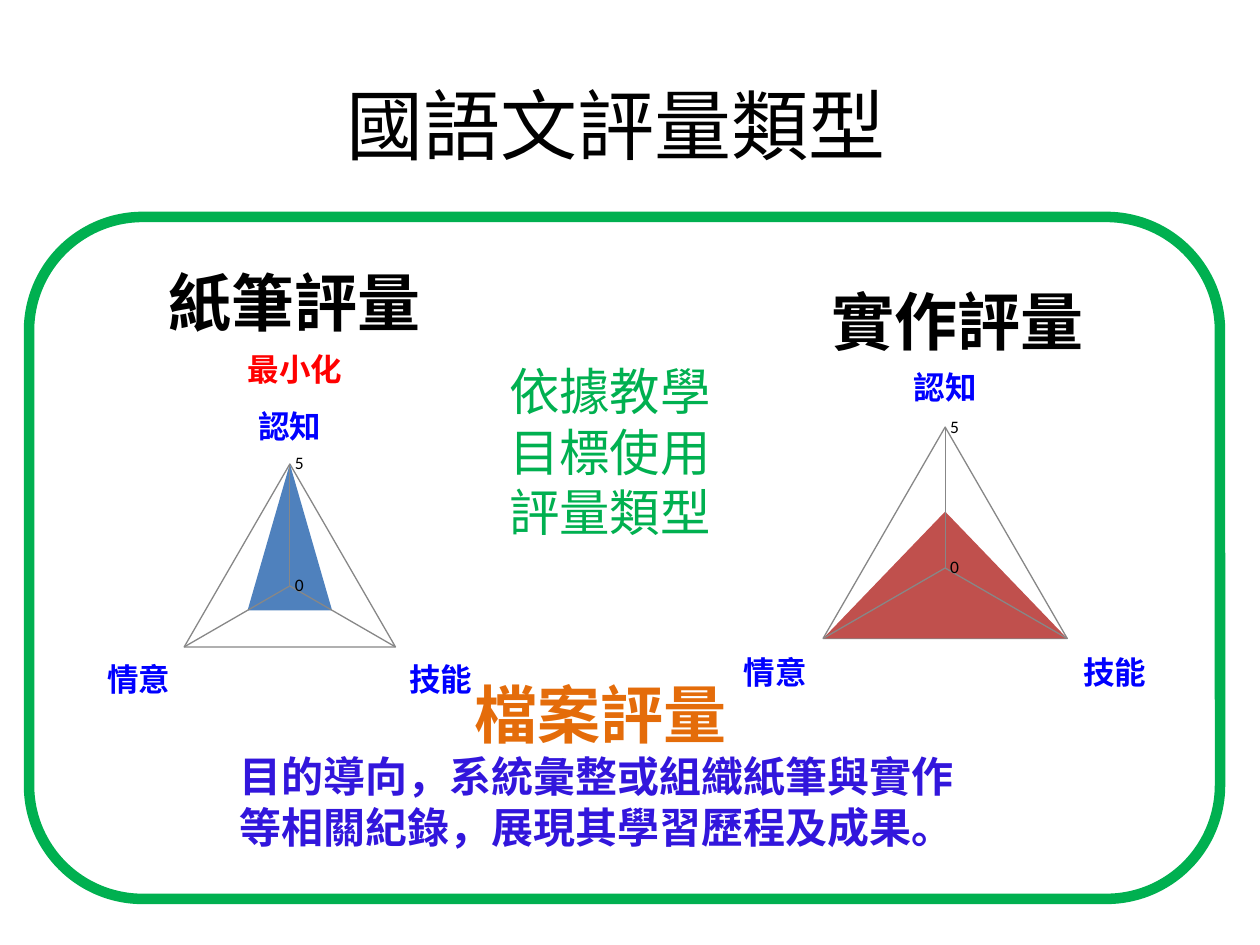
from dataclasses import dataclass

from lxml.etree import SubElement
from pptx import Presentation
from pptx.chart.data import CategoryChartData
from pptx.dml.color import RGBColor
from pptx.enum.chart import XL_CHART_TYPE as CT, XL_TICK_MARK as TM
from pptx.enum.shapes import MSO_SHAPE as MS
from pptx.enum.text import MSO_ANCHOR as MA, PP_ALIGN as PA
from pptx.oxml import parse_xml
from pptx.oxml.ns import nsdecls, qn
from pptx.util import Pt

PX = 914400 // 126
COLORS = {
    "black": "000000", "green": "00B050", "orange": "E46C0A", "violet": "3216DC",
    "blue": "0000FF", "red": "FF0000", "gray": "878787",
    "paper": "4F81BD", "practice": "C0504D",
}
ABILITIES = ("認知", "技能", "情意")


@dataclass(frozen=True)
class Box:
    x: int
    y: int
    w: int
    h: int

    def emu(self) -> tuple[int, ...]:
        return tuple(v * PX for v in (self.x, self.y, self.w, self.h))


@dataclass(frozen=True)
class Radar:
    box: Box
    title: str
    title_at: tuple[int, int]
    center: tuple[int, int]
    radius: int
    scores: tuple[int, ...]
    color: str
    note: str = ""


RADARS = (
    Radar(Box(0, 220, 581, 498), "紙筆評量", (165, 247), (290, 586), 122,
          (5, 2, 2), "paper", "最小化"),
    Radar(Box(669, 227, 552, 493), "實作評量", (820, 253), (945, 568), 141,
          (2, 5, 5), "practice"),
)


def rgb(name: str) -> RGBColor:
    return RGBColor.from_string(COLORS[name])


def set_font(font, size: float, color: str, bold: bool = False, name: str = "Calibri") -> None:
    font.size, font.bold, font.name = Pt(size), bold, name
    font.color.rgb = rgb(color)


def add_text(tf, text: str, *, first: bool = True, align=PA.CENTER, ea: str = "", **font) -> None:
    p = tf.paragraphs[0] if first else tf.add_paragraph()
    p.alignment = align
    r = p.add_run()
    r.text = text
    set_font(r.font, **font)
    if ea:
        latin = r._r.find(qn("a:rPr")).find(qn("a:latin"))
        latin.addnext(parse_xml(f'<a:ea {nsdecls("a")} typeface="{ea}"/>'))


def add_box(s, box: Box, anchor=MA.TOP):
    tf = s.shapes.add_textbox(*box.emu()).text_frame
    tf.word_wrap = True
    tf.vertical_anchor = anchor
    return tf


def place(parent, box: Box, x: int, y: int, size: int = 0) -> None:
    for old in parent.findall(qn("c:layout")):
        parent.remove(old)
    layout = parse_xml(f'<c:layout {nsdecls("c")}><c:manualLayout/></c:layout>')
    values = {"xMode": "edge", "yMode": "edge",
              "x": round((x - box.x) / box.w, 3), "y": round((y - box.y) / box.h, 3)}
    if size:
        values = {"layoutTarget": "inner", **values,
                  "w": round(size / box.w, 3), "h": round(size / box.h, 3)}
    for tag, value in values.items():
        SubElement(layout[0], qn(f"c:{tag}")).set("val", str(value))
    tx = parent.find(qn("c:tx"))
    if tx is None:
        parent.insert(0, layout)
    else:
        tx.addnext(layout)


def add_radar(s, radar: Radar) -> None:
    data = CategoryChartData()
    data.categories = ABILITIES
    data.add_series("Series 1", radar.scores)
    chart = s.shapes.add_chart(CT.RADAR_FILLED, *radar.box.emu(), data).chart
    chart.has_legend = False
    set_font(chart.font, 10, "black")

    chart.has_title = True
    title = chart.chart_title
    add_text(title.text_frame, radar.title, size=36, color="black", bold=True)
    if radar.note:
        add_text(title.text_frame, radar.note, first=False, size=18, color="red", bold=True)
    place(title._element, radar.box, *radar.title_at)

    cx, cy = radar.center
    place(chart._chartSpace.chart.plotArea, radar.box,
          cx - radar.radius, cy - radar.radius, 2 * radar.radius)

    cat, val = chart.category_axis, chart.value_axis
    for axis in (cat, val):
        axis.major_tick_mark = axis.minor_tick_mark = TM.NONE
        axis.has_major_gridlines = True
        axis.major_gridlines.format.line.color.rgb = rgb("gray")
    set_font(cat.tick_labels.font, 18, "blue", bold=True)
    cat.format.line.fill.background()
    val.format.line.color.rgb = rgb("gray")
    val.minimum_scale, val.maximum_scale, val.major_unit = 0, 5, 5

    plot = chart.plots[0]
    plot.vary_by_categories = False
    fill = plot.series[0].format.fill
    fill.solid()
    fill.fore_color.rgb = rgb(radar.color)
    plot.series[0].format.line.fill.background()


def main() -> None:
    prs = Presentation()
    prs.slide_width, prs.slide_height = 1260 * PX, 945 * PX
    s = prs.slides.add_slide(prs.slide_layouts[6])

    sp = s.shapes.add_shape(MS.ROUNDED_RECTANGLE, *Box(29, 217, 1191, 682).emu())
    sp.shadow.inherit = False
    sp.fill.background()
    sp.line.color.rgb = rgb("green")
    sp.line.width = Pt(6)

    tf = add_box(s, Box(227, 669, 748, 190))
    add_text(tf, "檔案評量", size=36, color="orange", bold=True, ea="Calibri")
    add_text(tf, "目的導向，系統彙整或組織紙筆與實作等相關紀錄，展現其學習歷程及成果。",
             first=False, align=PA.LEFT, size=24, color="violet", bold=True, ea="Calibri")

    for radar in RADARS:
        add_radar(s, radar)

    tf = add_box(s, Box(49, 59, 1134, 129), MA.MIDDLE)
    add_text(tf, "國語文評量類型", size=44, color="black", ea="Calibri")
    tf = add_box(s, Box(472, 354, 276, 186))
    add_text(tf, "依據教學目標使用評量類型", size=28.8, color="green",
             name="Noto Sans CJK SC", ea="Calibri")

    prs.save("out.pptx")


if __name__ == "__main__":
    main()
